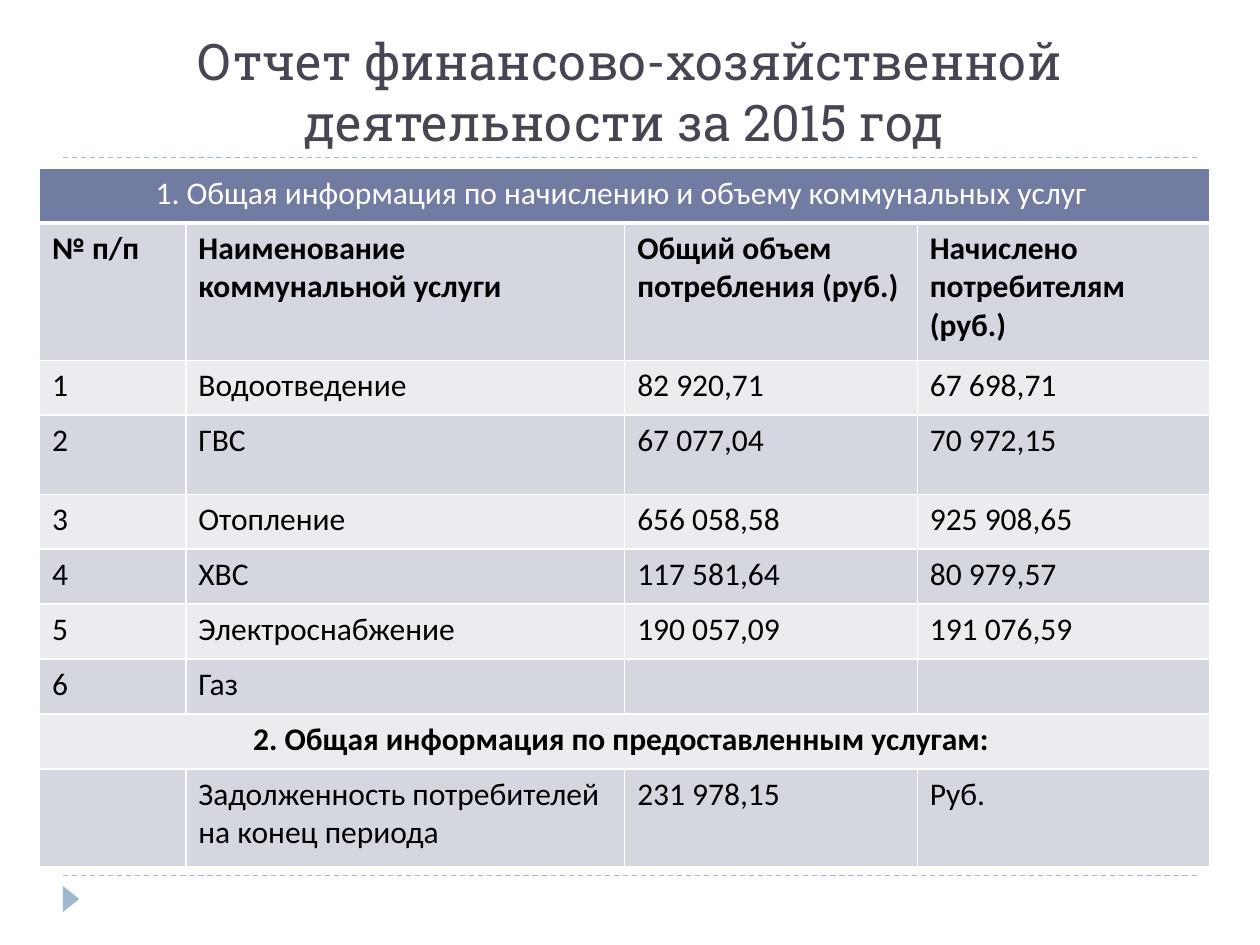
import pptx
import pptx.util
import pptx.dml.color
import pptx.enum.dml
import pptx.enum.shapes
import pptx.enum.text
import pptx.oxml
import pptx.oxml.ns
import lxml.etree

Pt = pptx.util.Pt
RGB = pptx.dml.color.RGBColor.from_string
CENTER = pptx.enum.text.PP_ALIGN.CENTER
COLORS = {
    "title": "464653",
    "accent": "9FB8CD",
    "header": "727CA3",
    "dark": "D5D7E0",
    "light": "EBECF0",
    "white": "FFFFFF",
    "black": "000000",
}


def add_run(p, text, font, size, color, bold=False):
    r = p.add_run()
    r.text = text
    r.font.name = font
    r.font.size = Pt(size)
    r.font.bold = bold
    r.font.color.rgb = RGB(COLORS[color])


def set_borders(cell, bottom):
    tcPr = cell._tc.get_or_add_tcPr()
    sides = (("lnL", 1), ("lnR", 1), ("lnT", 1), ("lnB", bottom))
    for i, (side, width) in enumerate(sides):
        ln = pptx.oxml.parse_xml(
            f'<a:{side} {pptx.oxml.ns.nsdecls("a")} w="{Pt(width)}"><a:solidFill>'
            f'<a:srgbClr val="{COLORS["white"]}"/></a:solidFill></a:{side}>'
        )
        tcPr.insert(i, ln)


prs = pptx.Presentation()
prs.slide_width, prs.slide_height = Pt(720), Pt(540)
s = prs.slides.add_slide(prs.slide_layouts[6])

for y in (500.4, 90):
    line = s.shapes.add_connector(
        pptx.enum.shapes.MSO_CONNECTOR.STRAIGHT, Pt(36), Pt(y), Pt(684), Pt(y)
    )
    line.line.color.rgb = RGB(COLORS["accent"])
    line.line.width = Pt(0.75)
    line.line.dash_style = pptx.enum.dml.MSO_LINE.DASH
    lxml.etree.SubElement(line._element.spPr, pptx.oxml.ns.qn("a:effectLst"))

sp = s.shapes.add_shape(
    pptx.enum.shapes.MSO_SHAPE.ISOSCELES_TRIANGLE, Pt(33.1), Pt(509), Pt(15), Pt(9.4)
)
sp.rotation = 90
sp.shadow.inherit = False
sp.fill.solid()
sp.fill.fore_color.rgb = RGB(COLORS["accent"])
sp.line.fill.background()

tf = s.shapes.add_textbox(Pt(36), Pt(18), Pt(648), Pt(72)).text_frame
tf.word_wrap = True
tf.vertical_anchor = pptx.enum.text.MSO_ANCHOR.BOTTOM
p = tf.paragraphs[0]
p.alignment = CENTER
add_run(p, "Отчет финансово-хозяйственной деятельности за 2015 год ", "Roboto Slab", 28.8, "title")

rows = [
    ["1. Общая информация по начислению и объему коммунальных услуг "],
    ["№ п/п", "Наименование коммунальной услуги", "Общий объем потребления (руб.)",
     "Начислено потребителям (руб.)"],
    ["1", "Водоотведение", "82 920,71", "67 698,71"],
    ["2", "ГВС", "67 077,04", "70 972,15"],
    ["3", "Отопление", "656 058,58", "925 908,65"],
    ["4", "ХВС", "117 581,64", "80 979,57"],
    ["5", "Электроснабжение", "190 057,09", "191 076,59"],
    ["6", "Газ", "", ""],
    ["2. Общая информация по предоставленным услугам: "],
    ["", "Задолженность потребителей на конец периода", "231 978,15", "Руб."],
]
heights = {1: 78.5, 3: 45.2, 9: 56}
bold_rows = (1, 8)

table = s.shapes.add_table(len(rows), 4, Pt(22.6), Pt(96), Pt(669), Pt(399.6)).table
for col, units in zip(table.columns, (1, 3, 2, 2)):
    col.width = Pt(83.6 * units)

for i, texts in enumerate(rows):
    table.rows[i].height = Pt(heights.get(i, 31.4))
    fill = "header" if i == 0 else "dark" if i % 2 else "light"
    for cell in table.rows[i].cells:
        cell.fill.solid()
        cell.fill.fore_color.rgb = RGB(COLORS[fill])
        set_borders(cell, 3 if i == 0 else 1)
    if len(texts) == 1:
        table.cell(i, 0).merge(table.cell(i, 3))
        table.cell(i, 0).text_frame.paragraphs[0].alignment = CENTER
    for j, text in enumerate(texts):
        if text:
            p = table.cell(i, j).text_frame.paragraphs[0]
            add_run(p, text, "Calibri", 18, "black" if i else "white", i in bold_rows)

prs.save("out.pptx")
